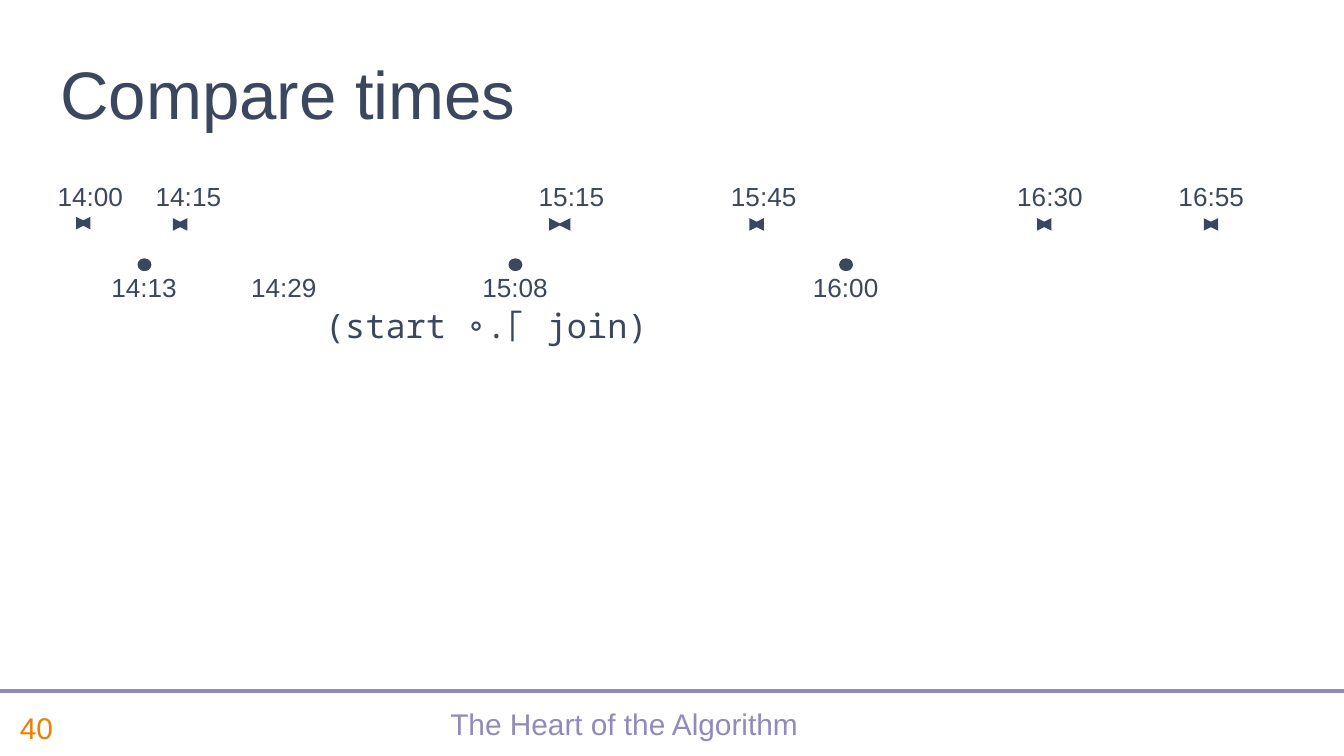
from lxml import etree
from pptx import Presentation
from pptx.dml.color import RGBColor
from pptx.enum.dml import MSO_LINE
from pptx.enum.shapes import MSO_CONNECTOR as CONNECTOR
from pptx.enum.text import MSO_ANCHOR as ANCHOR, MSO_AUTO_SIZE as AUTO_SIZE, PP_ALIGN as ALIGN
from pptx.oxml.ns import qn
from pptx.util import Inches, Pt

NAVY = "3B475E"
LILAC = "928ABD"
ORANGE = "ED7F00"

START_TIMES = [("14:00", 0.33), ("14:15", 1.06), ("15:15", 3.91),
               ("15:45", 5.34), ("16:30", 7.47), ("16:55", 8.67)]
JOIN_TIMES = [("14:13", 0.73), ("14:29", 1.77), ("15:08", 3.49), ("16:00", 5.95)]
ARROWS = [(0.58, 0.66, 1.66), (1.3, 1.38, 1.67), (4.15, 4.18, 1.67),
          (5.59, 5.67, 1.67), (7.73, 7.81, 1.67), (8.97, 9.05, 1.67)]
DOTS = [1.07, 3.83, 6.29]


def color(hex_value):
    return RGBColor.from_string(hex_value)


def add_text(slide, text, left, top, width, height, size, fill=NAVY, font="Arial",
             anchor=ANCHOR.TOP, align=ALIGN.LEFT, wrap=True, spacing=None):
    shape = slide.shapes.add_textbox(Inches(left), Inches(top), Inches(width), Inches(height))
    frame = shape.text_frame
    frame.text = text
    frame.word_wrap = wrap
    frame.auto_size = AUTO_SIZE.NONE if wrap else AUTO_SIZE.SHAPE_TO_FIT_TEXT
    frame.vertical_anchor = anchor
    paragraph = frame.paragraphs[0]
    paragraph.alignment = align
    paragraph.line_spacing = spacing
    for run in paragraph.runs:
        run.font.size = Pt(size)
        run.font.name = font
        run.font.color.rgb = color(fill)
    return shape


def add_line(slide, start, end, top, fill=NAVY, ends=None, dash=None):
    line = slide.shapes.add_connector(CONNECTOR.STRAIGHT, Inches(start), Inches(top),
                                      Inches(end), Inches(top))
    line.line.color.rgb = color(fill)
    line.line.width = Pt(2.25)
    if dash:
        line.line.dash_style = dash
    properties = line._element.spPr
    if ends:
        outline = properties.find(qn("a:ln"))
        for tag in ("a:headEnd", "a:tailEnd"):
            etree.SubElement(outline, qn(tag), type=ends)
    etree.SubElement(properties, qn("a:effectLst"))


def add_time_labels(slide, times, top):
    for text, left in times:
        add_text(slide, text, left, top, 0.69, 0.34, 14, wrap=False)


def add_footer(slide):
    add_text(slide, "The Heart of the Algorithm", 0.78, 5.19, 7.73, 0.44, 16, LILAC,
             anchor=ANCHOR.MIDDLE, align=ALIGN.CENTER, spacing=0.8)
    add_text(slide, "40", 0.05, 5.19, 0.73, 0.44, 16, ORANGE, anchor=ANCHOR.MIDDLE)
    add_line(slide, 0, 10, 5.14, LILAC)


def main():
    presentation = Presentation()
    presentation.slide_width = Inches(10)
    presentation.slide_height = Inches(10) * 9 // 16
    slide = presentation.slides.add_slide(presentation.slide_layouts[6])

    add_footer(slide)
    add_text(slide, "Compare times", 0.35, 0.29, 7.66, 0.75, 36, anchor=ANCHOR.BOTTOM)
    for start, end, top in ARROWS:
        add_line(slide, start, end, top, ends="triangle")
    for left in DOTS:
        add_line(slide, left, left + 0.01, 1.97, ends="oval", dash=MSO_LINE.LONG_DASH)
    add_time_labels(slide, START_TIMES, 1.29)
    add_time_labels(slide, JOIN_TIMES, 1.97)
    add_text(slide, "      (start ∘.⌈ join)", 1.42, 2.22, 3.52, 0.4, 18,
             font="Noto Sans Mono", wrap=False)
    presentation.save("out.pptx")


if __name__ == "__main__":
    main()
